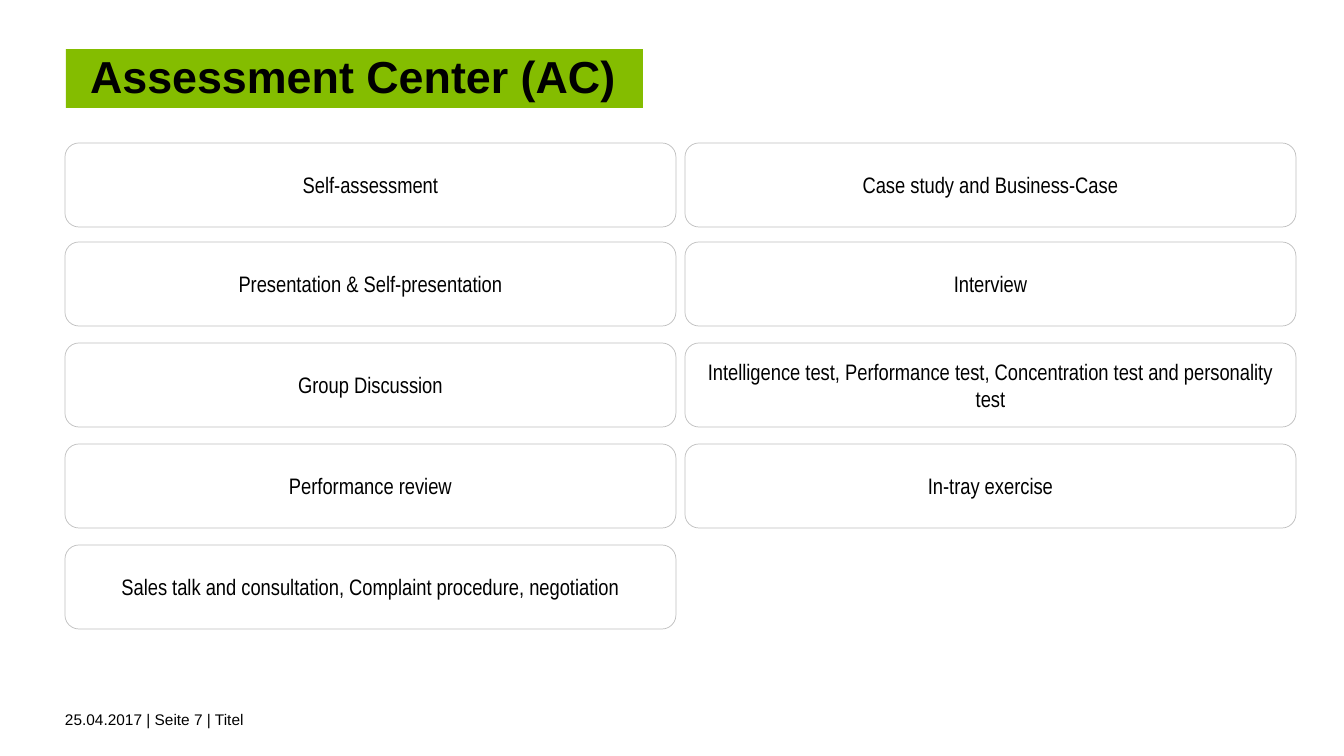
from pptx import Presentation
from pptx.dml.color import RGBColor
from pptx.enum.shapes import MSO_SHAPE
from pptx.enum.text import MSO_ANCHOR, MSO_AUTO_SIZE, PP_ALIGN
from pptx.util import Pt

ROUNDED = MSO_SHAPE.ROUNDED_RECTANGLE
TOP, MIDDLE = MSO_ANCHOR.TOP, MSO_ANCHOR.MIDDLE
LEFT, CENTER = PP_ALIGN.LEFT, PP_ALIGN.CENTER
NO_AUTOFIT = MSO_AUTO_SIZE.NONE
COLORS = {"text": "000000", "title": "84BD00", "card": "FFFFFF", "border": "BFBFBF"}


def px(value):
    return round(value * 914400 / 100.8)


def write_text(shape, text, size, font="Arial", bold=False, align=LEFT,
               anchor=MIDDLE, margins=(10, 5, 10, 5), line_spacing=1.0):
    frame = shape.text_frame
    frame.word_wrap = True
    frame.auto_size = NO_AUTOFIT
    frame.vertical_anchor = anchor
    frame.margin_left, frame.margin_top, frame.margin_right, frame.margin_bottom = map(px, margins)
    paragraph = frame.paragraphs[0]
    paragraph.alignment = align
    paragraph.line_spacing = line_spacing
    run = paragraph.add_run()
    run.text = text
    run.font.name = font
    run.font.size = Pt(size)
    run.font.bold = bold
    run.font.color.rgb = RGBColor.from_string(COLORS["text"])


presentation = Presentation()
presentation.slide_width, presentation.slide_height = px(1344), px(756)
slide = presentation.slides.add_slide(presentation.slide_layouts[5])

title = slide.shapes.title
title.left, title.top, title.width, title.height = px(66), px(49), px(577), px(59)
title.fill.solid()
title.fill.fore_color.rgb = RGBColor.from_string(COLORS["title"])
write_text(title, "Assessment Center (AC)", 32, bold=True,
           margins=(24, 5, 10, 5), line_spacing=0.9)

exercises = [
    (143, ["Self-assessment", "Case study and Business-Case"]),
    (242, ["Presentation & Self-presentation", "Interview"]),
    (343, ["Group Discussion",
           "Intelligence test, Performance test, Concentration test and personality test"]),
    (444, ["Performance review", "In-tray exercise"]),
    (545, ["Sales talk and consultation, Complaint procedure, negotiation"]),
]
for top, labels in exercises:
    for column, label in enumerate(labels):
        card = slide.shapes.add_shape(ROUNDED, px(65 + column * 620), px(top), px(611), px(84))
        card.shadow.inherit = False
        card.fill.solid()
        card.fill.fore_color.rgb = RGBColor.from_string(COLORS["card"])
        card.line.color.rgb = RGBColor.from_string(COLORS["border"])
        card.line.width = Pt(0.5)
        write_text(card, label, 16, font="Arial Narrow", align=CENTER)

footer = slide.shapes.add_textbox(px(65), px(705), px(806), px(40))
write_text(footer, "25.04.2017 | Seite 7 | Titel", 11, anchor=TOP, margins=(0, 5, 10, 5))

presentation.save("out.pptx")
